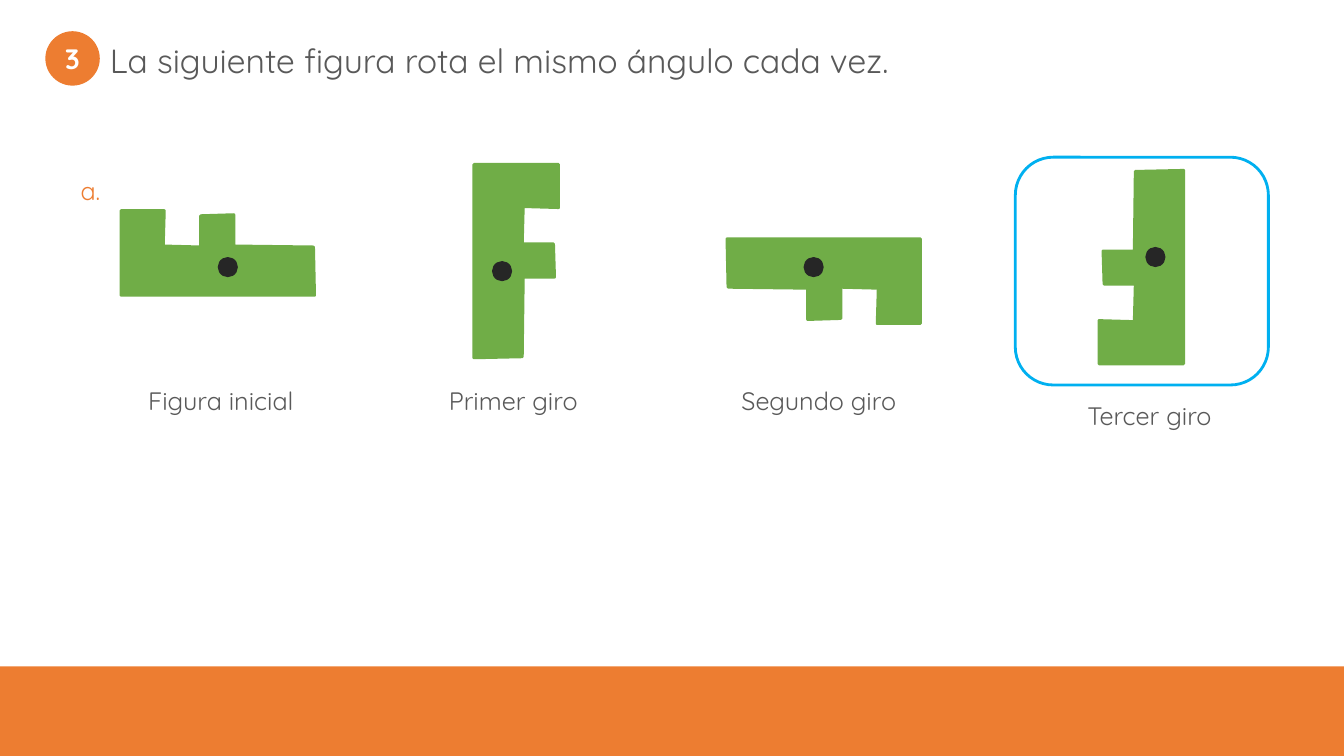
from dataclasses import dataclass
from math import cos, radians, sin

from pptx import Presentation
from pptx.dml.color import RGBColor
from pptx.enum.shapes import MSO_SHAPE
from pptx.enum.text import MSO_ANCHOR, MSO_AUTO_SIZE, PP_ALIGN
from pptx.util import Pt

EMU_PER_PX = 9144
SLIDE_WIDTH, SLIDE_HEIGHT = 1333, 750


@dataclass(frozen=True)
class Theme:
    font: str = "Quicksand"
    orange: str = "ED7D31"
    green: str = "70AD47"
    blue: str = "00B0F0"
    dark: str = "262626"
    gray: str = "595959"
    white: str = "FFFFFF"
    title_size: int = 24
    number_size: int = 20
    label_size: int = 18
    line_width: int = 2


def px(value):
    return round(value * EMU_PER_PX)


class SlideBuilder:
    def __init__(self, slide, theme):
        self.slide = slide
        self.theme = theme

    def paint(self, shape, fill=None, line=None):
        shape.shadow.inherit = False
        if fill:
            shape.fill.solid()
            shape.fill.fore_color.rgb = RGBColor.from_string(fill)
        else:
            shape.fill.background()
        if line:
            shape.line.color.rgb = RGBColor.from_string(line)
            shape.line.width = Pt(self.theme.line_width)
        else:
            shape.line.fill.background()

    def set_text(self, shape, text, size, color, align, bold=False):
        text_frame = shape.text_frame
        text_frame.word_wrap = True
        text_frame.text = text
        paragraph = text_frame.paragraphs[0]
        paragraph.alignment = align
        font = paragraph.runs[0].font
        font.name = self.theme.font
        font.size = Pt(size)
        font.bold = bold
        font.color.rgb = RGBColor.from_string(color)

    def shape(self, kind, box, fill=None, line=None, parent=None):
        shapes = (parent or self.slide).shapes
        shape = shapes.add_shape(kind, *map(px, box))
        self.paint(shape, fill, line)
        return shape

    def text(self, box, text, size, color, align=PP_ALIGN.LEFT, fill=None):
        shape = self.slide.shapes.add_textbox(*map(px, box))
        self.set_text(shape, text, size, color, align)
        shape.text_frame.auto_size = MSO_AUTO_SIZE.SHAPE_TO_FIT_TEXT
        if fill:
            self.paint(shape, fill)

    def badge(self, box, text):
        shape = self.shape(MSO_SHAPE.OVAL, box, self.theme.orange)
        shape.text_frame.vertical_anchor = MSO_ANCHOR.MIDDLE
        self.set_text(shape, text, self.theme.number_size, self.theme.white,
                      PP_ALIGN.CENTER, bold=True)

    def figure(self, left, top, angle):
        group = self.slide.shapes.add_group_shape()
        builder = group.shapes.build_freeform(*OUTLINE[0], scale=EMU_PER_PX)
        builder.add_line_segments(OUTLINE[1:], close=True)
        body = builder.convert_to_shape(px(left), px(top))
        body.rotation = angle
        self.paint(body, self.theme.green, self.theme.green)
        turn = radians(angle)
        offset_x, offset_y = PIVOT_OFFSET
        center_x = left + FIGURE_WIDTH / 2 + offset_x * cos(turn) - offset_y * sin(turn)
        center_y = top + FIGURE_HEIGHT / 2 + offset_x * sin(turn) + offset_y * cos(turn)
        box = (center_x - PIVOT_SIZE / 2, center_y - PIVOT_SIZE / 2, PIVOT_SIZE, PIVOT_SIZE)
        self.shape(MSO_SHAPE.OVAL, box, self.theme.dark, parent=group)


FIGURE_WIDTH, FIGURE_HEIGHT = 192, 84
PIVOT_OFFSET = (10, 14)
PIVOT_SIZE = 20
OUTLINE = [(0, 0), (43, 0), (42, 35), (79, 36), (79, 5), (112, 4),
           (112, 35), (191, 36), (192, 84), (0, 84)]
TURNS = [
    ("Figura inicial", (120, 209), (90, 377, 258, 40), None),
    ("Primer giro", (416, 217), (380, 377, 258, 40), None),
    ("Segundo giro", (721, 237), (683, 377, 258, 40), None),
    ("Tercer giro", (1036, 223), (1029, 392, 222, 40), Theme.white),
]


def main():
    presentation = Presentation()
    presentation.slide_width = px(SLIDE_WIDTH)
    presentation.slide_height = px(SLIDE_HEIGHT)
    slide = presentation.slides.add_slide(presentation.slide_layouts[6])
    theme = Theme()
    builder = SlideBuilder(slide, theme)

    builder.shape(MSO_SHAPE.RECTANGLE, (0, 661, SLIDE_WIDTH, 89), theme.orange)
    builder.text((99, 35, 842, 50), "La siguiente figura rota el mismo ángulo cada vez.",
                 theme.title_size, theme.gray)
    builder.badge((45, 31, 54, 54), "3")
    builder.text((70, 169, 41, 40), "a.", theme.label_size, theme.orange)
    builder.shape(MSO_SHAPE.ROUNDED_RECTANGLE, (1007, 156, 251, 226), line=theme.blue)

    for index, (label, position, label_box, label_fill) in enumerate(TURNS):
        builder.text(label_box, label, theme.label_size, theme.gray,
                     PP_ALIGN.CENTER, label_fill)
        builder.figure(*position, angle=90 * index)

    presentation.save("out.pptx")


if __name__ == "__main__":
    main()
